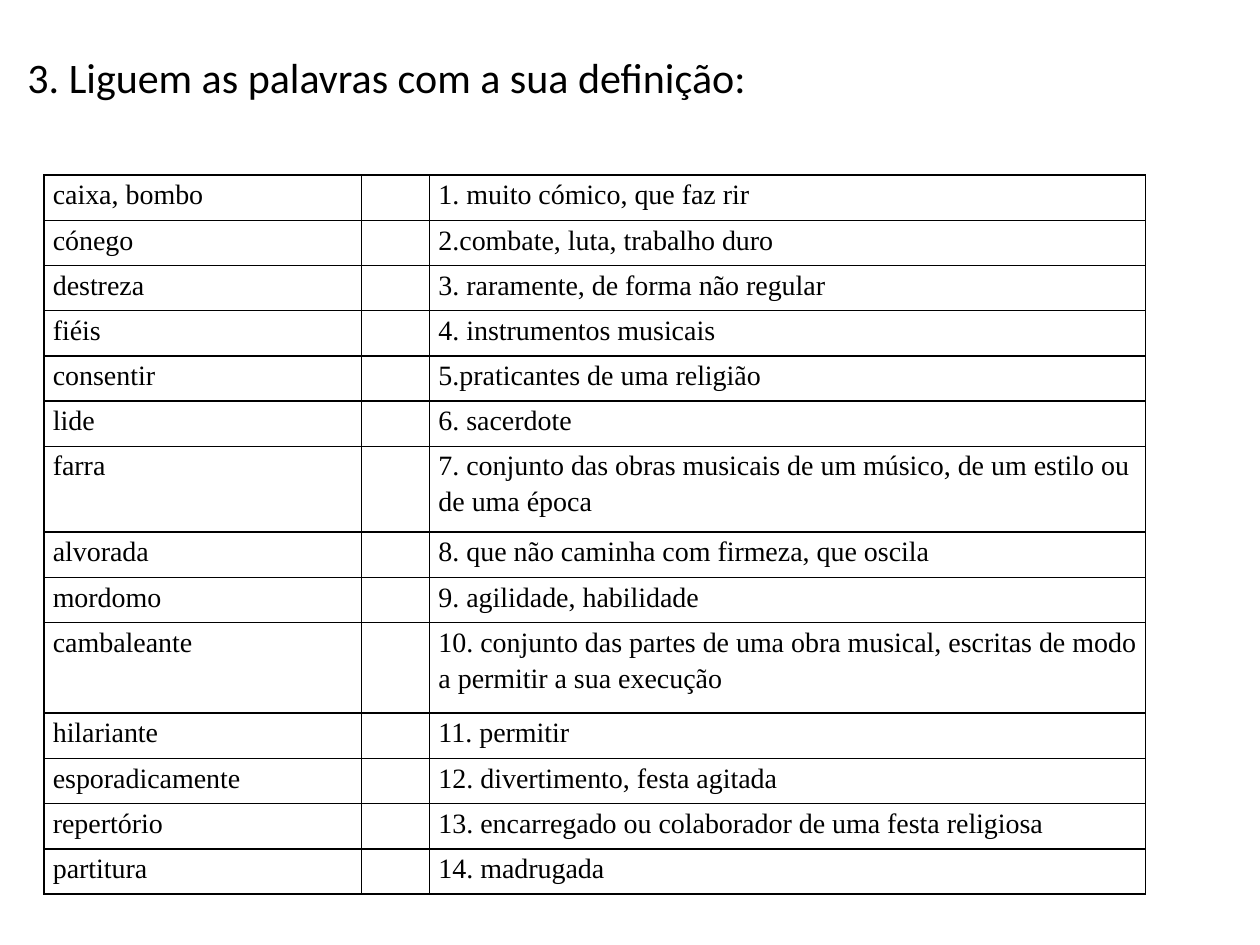
from lxml.etree import SubElement
from pptx import Presentation
from pptx.dml.color import RGBColor
from pptx.oxml.ns import qn
from pptx.util import Pt

COLORS = {"text": "000000", "border": "000000"}
TITLE_FONT = {"name": "Calibri", "size": Pt(24)}
CELL_FONT = {"name": "Times New Roman", "size": Pt(16)}
CELL_MARGINS = {"margin_left": Pt(5), "margin_right": Pt(5),
                "margin_top": 0, "margin_bottom": 0}
COLUMN_WIDTHS = [181.5, 38.9, 409]
ROW_HEIGHT = 25.84
TALL_ROWS = {6: 49.1, 9: 51.8}

PAIRS = [
    ("caixa, bombo", "1. muito cómico, que faz rir"),
    ("cónego", "2.combate, luta, trabalho duro"),
    ("destreza", "3. raramente, de forma não regular"),
    ("fiéis", "4. instrumentos musicais"),
    ("consentir", "5.praticantes de uma religião"),
    ("lide", "6. sacerdote"),
    ("farra", "7. conjunto das obras musicais de um músico, de um estilo ou de uma época"),
    ("alvorada", "8. que não caminha com firmeza, que oscila"),
    ("mordomo", "9. agilidade, habilidade"),
    ("cambaleante", "10. conjunto das partes de uma obra musical, escritas de modo a "
                    "permitir a sua execução"),
    ("hilariante", "11. permitir"),
    ("esporadicamente", "12. divertimento, festa agitada"),
    ("repertório", "13. encarregado ou colaborador de uma festa religiosa"),
    ("partitura", "14. madrugada"),
]


def set_attrs(obj, values):
    for name, value in values.items():
        setattr(obj, name, value)


def add_text(p, text, font):
    r = p.add_run()
    r.text = text
    set_attrs(r.font, font)
    r.font.color.rgb = RGBColor.from_string(COLORS["text"])


def add_borders(cell):
    tc_pr = cell._tc.get_or_add_tcPr()
    for i, side in enumerate(("lnL", "lnR", "lnT", "lnB")):
        ln = tc_pr.makeelement(qn(f"a:{side}"), {"w": str(Pt(1))})
        fill = SubElement(ln, qn("a:solidFill"))
        SubElement(fill, qn("a:srgbClr"), val=COLORS["border"])
        tc_pr.insert(i, ln)


def format_cell(cell, text):
    set_attrs(cell, CELL_MARGINS)
    cell.fill.background()
    add_borders(cell)
    p = cell.text_frame.paragraphs[0]
    p.line_spacing = 1.15
    if text:
        add_text(p, text, CELL_FONT)
    else:
        # Keeps empty answer cells as low as the text rows
        SubElement(p._p, qn("a:endParaRPr"), sz="1600")


def add_instruction(s, left, top, width, height):
    box = s.shapes.add_textbox(Pt(left), Pt(top), Pt(width), Pt(height))
    tf = box.text_frame
    tf.word_wrap = True
    p = tf.paragraphs[0]
    p.space_before = Pt(2)
    add_text(p, "3. Liguem as palavras com a sua definição:", TITLE_FONT)


def add_matching_table(s, left, top, width, height):
    frame = s.shapes.add_table(len(PAIRS), len(COLUMN_WIDTHS),
                               Pt(left), Pt(top), Pt(width), Pt(height))
    table = frame.table
    set_attrs(table, {"first_row": False, "horz_banding": False})
    for column, column_width in zip(table.columns, COLUMN_WIDTHS):
        column.width = Pt(column_width)
    for i, (word, definition) in enumerate(PAIRS):
        table.rows[i].height = Pt(TALL_ROWS.get(i, ROW_HEIGHT))
        for j, text in enumerate((word, "", definition)):
            format_cell(table.cell(i, j), text)


def main():
    prs = Presentation()
    prs.slide_width, prs.slide_height = Pt(720), Pt(540)
    s = prs.slides.add_slide(prs.slide_layouts[6])
    add_instruction(s, 8.6, 25.9, 697.7, 504.7)
    add_matching_table(s, 25.2, 100.1, 629.4, 411)
    prs.save("out.pptx")


if __name__ == "__main__":
    main()
